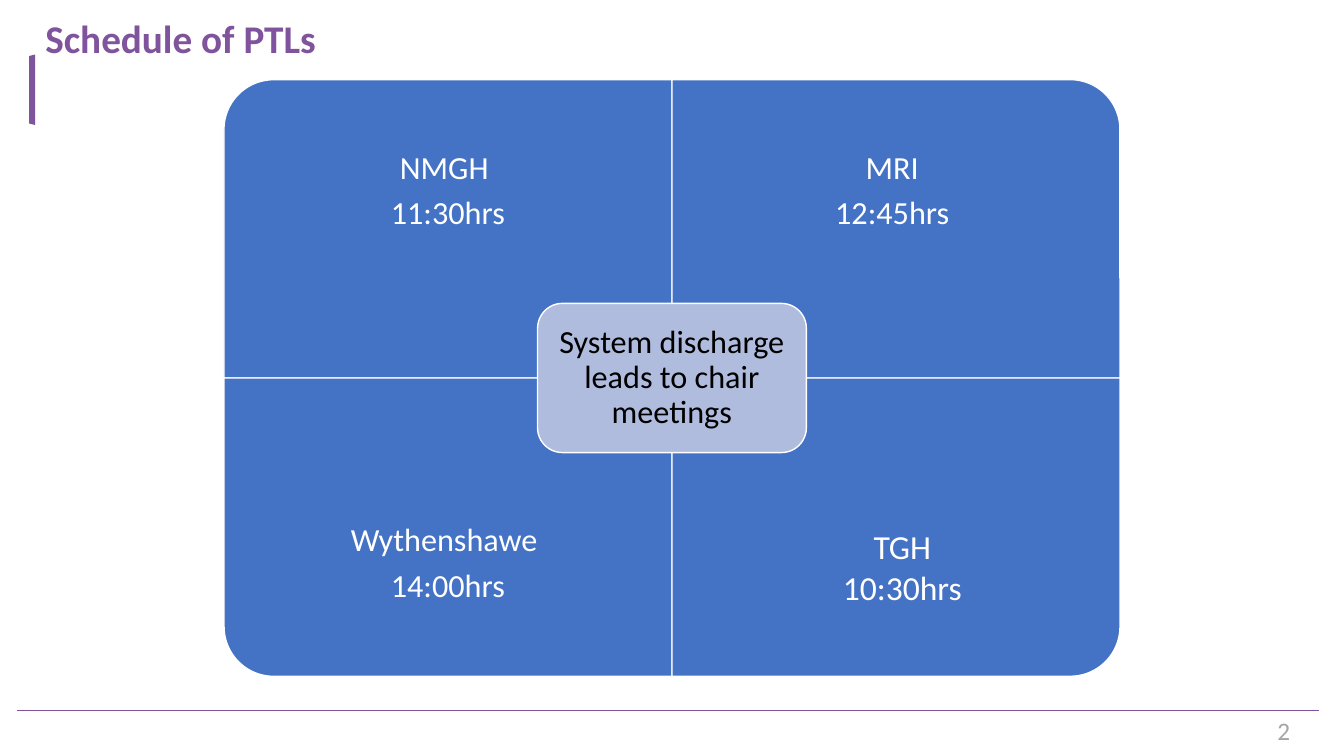
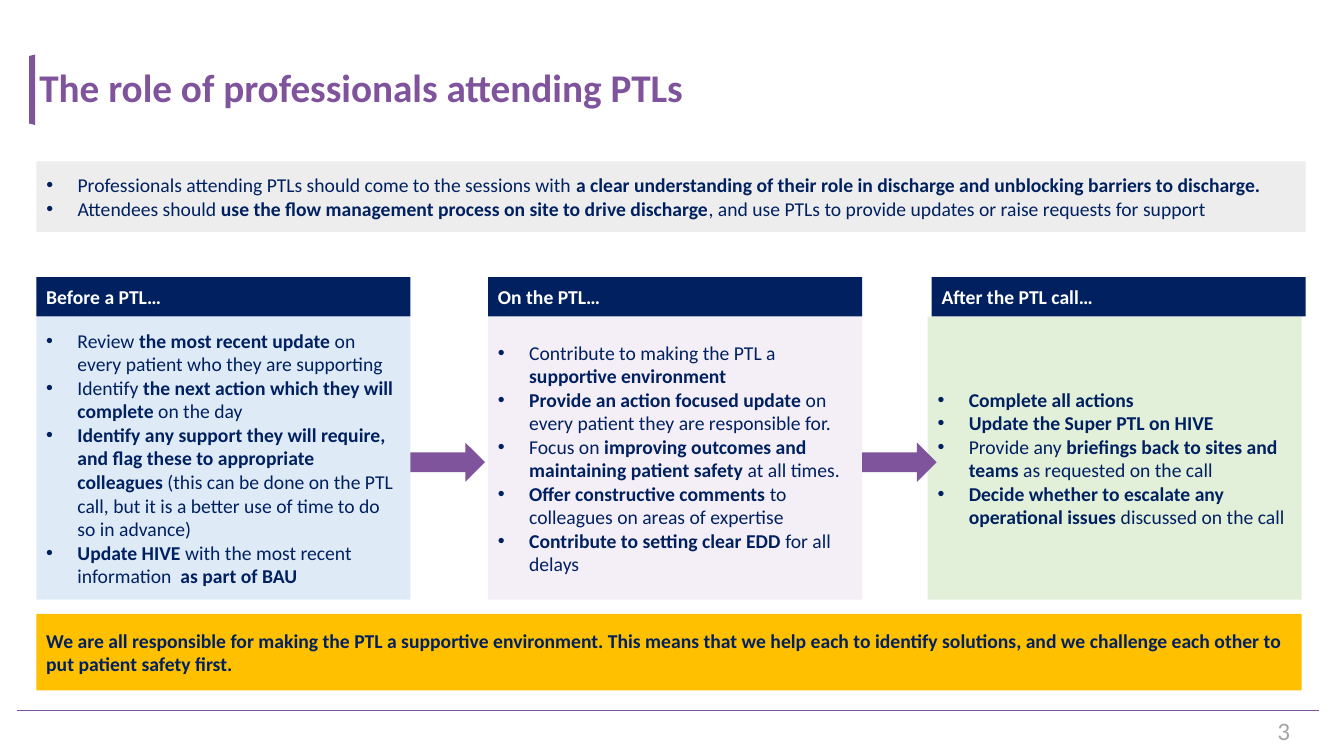
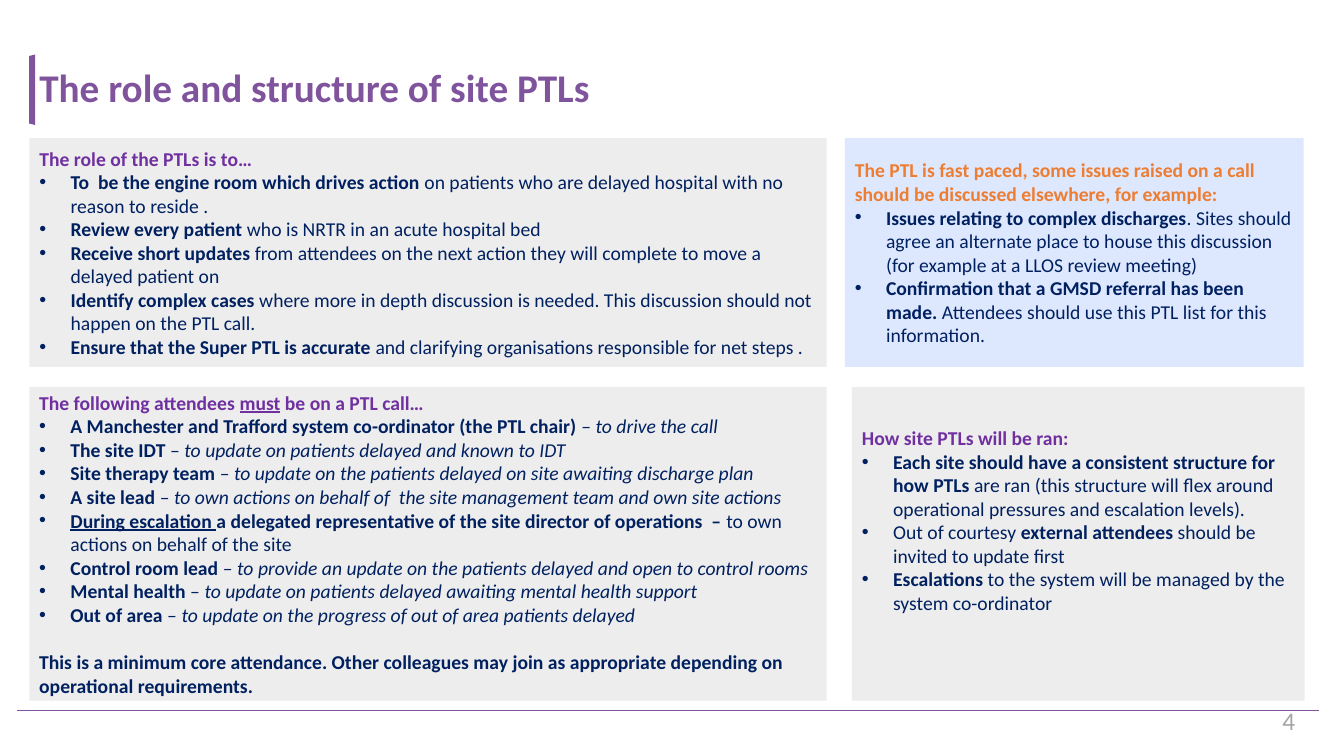
from dataclasses import dataclass
from typing import NamedTuple

from lxml import etree
from pptx import Presentation
from pptx.dml.color import RGBColor
from pptx.enum.shapes import MSO_CONNECTOR, MSO_SHAPE
from pptx.enum.text import MSO_ANCHOR, MSO_AUTO_SIZE, PP_ALIGN
from pptx.oxml.ns import qn
from pptx.util import Inches, Pt

RECT, ROUNDED = MSO_SHAPE.RECTANGLE, MSO_SHAPE.ROUNDED_RECTANGLE
ONE_ROUND, ARROW = MSO_SHAPE.ROUND_1_RECTANGLE, MSO_SHAPE.RIGHT_ARROW
TRAPEZOID, STRAIGHT = MSO_SHAPE.TRAPEZOID, MSO_CONNECTOR.STRAIGHT
TOP, MIDDLE = MSO_ANCHOR.TOP, MSO_ANCHOR.MIDDLE
LEFT, CENTER = PP_ALIGN.LEFT, PP_ALIGN.CENTER
NO_FIT = MSO_AUTO_SIZE.NONE

PURPLE = RGBColor(0x80, 0x53, 0x9D)
VIOLET = RGBColor(0x70, 0x30, 0xA0)
ORANGE = RGBColor(0xED, 0x7D, 0x31)
NAVY = RGBColor(0x00, 0x20, 0x60)
BLUE = RGBColor(0x44, 0x72, 0xC4)
LAVENDER = RGBColor(0xB0, 0xBC, 0xDE)
ICE = RGBColor(0xDE, 0xEB, 0xF7)
LILAC = RGBColor(0xF4, 0xEF, 0xF7)
MINT = RGBColor(0xE2, 0xF0, 0xD9)
SKY = RGBColor(0xDD, 0xE8, 0xFF)
PALE_GREY = RGBColor(0xED, 0xED, 0xED)
MID_GREY = RGBColor(0xA5, 0xA5, 0xA5)
AMBER = RGBColor(0xFF, 0xC0, 0x00)
WHITE = RGBColor(0xFF, 0xFF, 0xFF)
BLACK = RGBColor(0x00, 0x00, 0x00)

WIDTH, HEIGHT = 13.33, 7.5
FONT = "Calibri"
BODY_SIZE = 14
INDENT = Inches(0.31)
# Characters that switch a run format on and off
MARKS = {"*": "bold", "~": "italic", "_": "underline"}


class Box(NamedTuple):
    left: float
    top: float
    width: float
    height: float

    def emu(self) -> list[int]:
        return [Inches(v) for v in self]


@dataclass
class Panel:
    box: Box
    fill: RGBColor
    items: tuple[str, ...] = ()
    heading: str = ""
    heading_colour: RGBColor = VIOLET
    closing: str = ""
    bottom: float = 0.05


class Column(NamedTuple):
    head_left: float
    body_left: float
    heading: str
    fill: RGBColor
    items: tuple[str, ...]


class Site(NamedTuple):
    col: int
    row: int
    rotation: int
    lines: tuple[str, ...]


# Text
def add_runs(p, text: str, size: float, colour: RGBColor) -> None:
    """Write marked-up text, one run per change of format."""
    formats = {"name": FONT, "size": Pt(size), "bold": False, "italic": False, "underline": False}
    chunk = ""
    for char in text + "\0":
        if char not in MARKS and char != "\0":
            chunk += char
            continue
        if chunk:
            r = p.add_run()
            r.text = chunk
            r.font.color.rgb = colour
            for name, value in formats.items():
                setattr(r.font, name, value)
            chunk = ""
        if char in MARKS:
            formats[MARKS[char]] = not formats[MARKS[char]]


def set_bullet(p, bullet: bool) -> None:
    pPr = p._p.get_or_add_pPr()
    pPr.set("marL", str(INDENT if bullet else 0))
    pPr.set("indent", str(-INDENT if bullet else 0))
    if bullet:
        etree.SubElement(pPr, qn("a:buFont")).set("typeface", "Arial")
        etree.SubElement(pPr, qn("a:buChar")).set("char", "•")
    else:
        etree.SubElement(pPr, qn("a:buNone"))


def next_paragraph(tf):
    return tf.add_paragraph() if tf.paragraphs[0].runs else tf.paragraphs[0]


def add_text(s, box: Box, lines: tuple[str, ...], size: float, colour: RGBColor, align=CENTER,
             anchor=MIDDLE, spacing: float = 1, after: float = 0):
    tf = s.shapes.add_textbox(*box.emu()).text_frame
    tf.word_wrap, tf.vertical_anchor = True, anchor
    for line in lines:
        p = next_paragraph(tf)
        p.alignment, p.line_spacing, p.space_after = align, spacing, Pt(after)
        add_runs(p, line, size, colour)


# Shapes
def add_block(s, kind, box: Box, fill: RGBColor, rotation: int = 0, outline: bool = False):
    shape = s.shapes.add_shape(kind, *box.emu())
    shape.shadow.inherit = False
    shape.rotation = rotation
    shape.fill.solid()
    shape.fill.fore_color.rgb = fill
    if outline:
        shape.line.color.rgb, shape.line.width = WHITE, Pt(1)
    else:
        shape.line.fill.background()
    return shape


def fill_panel(shape, panel: Panel) -> None:
    tf = shape.text_frame
    settings = {"word_wrap": True, "auto_size": NO_FIT, "vertical_anchor": MIDDLE,
                "margin_bottom": Inches(panel.bottom)}
    for name, value in settings.items():
        setattr(tf, name, value)
    parts = [(panel.heading, panel.heading_colour, False, 0)]
    parts += [(item, NAVY, True, 0) for item in panel.items]
    parts += [(panel.closing, NAVY, False, 17)]
    for text, colour, bullet, gap in parts:
        if not text:
            continue
        p = next_paragraph(tf)
        set_bullet(p, bullet)
        p.alignment, p.space_before = LEFT, Pt(gap)
        add_runs(p, text, BODY_SIZE, colour)


def add_panel(s, panel: Panel) -> None:
    fill_panel(add_block(s, RECT, panel.box, panel.fill), panel)


def use_body(s, panel: Panel) -> None:
    """Put a panel in the body placeholder of the layout."""
    body = s.placeholders[1]
    body.left, body.top, body.width, body.height = panel.box.emu()
    body.fill.solid()
    body.fill.fore_color.rgb = panel.fill
    fill_panel(body, panel)


# Shared slide parts
def decorate_master(prs, s) -> None:
    """Draw the title mark and the footer rule, then move them to the master."""
    mark = add_block(s, TRAPEZOID, Box(-0.03, 0.86, 0.7, 0.06), PURPLE, rotation=270)
    rule = s.shapes.add_connector(STRAIGHT, *Box(0.17, 7.05, 13.08, 7.05).emu())
    rule.line.color.rgb, rule.line.width = PURPLE, Pt(1)
    etree.SubElement(rule.element.spPr, qn("a:effectLst"))
    for shape in (mark, rule):
        prs.slide_master.element.cSld.spTree.append(shape.element)


def start_slide(prs, layout: int, title: str, number: int, left: float = 0.29, top: float = 0.63,
                number_at: tuple[float, float] = (12.57, 7.05)):
    s = prs.slides.add_slide(prs.slide_layouts[layout])
    shape = s.shapes.title
    shape.left, shape.top, shape.width, shape.height = Box(left, top, 12.82, 0.53).emu()
    tf = shape.text_frame
    tf.vertical_anchor, tf.auto_size = TOP, NO_FIT
    p = tf.paragraphs[0]
    p.alignment, p.line_spacing = LEFT, 0.9
    add_runs(p, f"*{title}*", 28, PURPLE)
    add_text(s, Box(*number_at, 0.51, 0.4), (str(number),), 18, MID_GREY, LEFT, TOP)
    return s


# Slide 1: four sites around a centre
SITES = (
    Site(0, 0, 270, ("NMGH ", "11:30hrs")),
    Site(1, 0, 0, ("MRI ", "12:45hrs ")),
    Site(0, 1, 180, ("Wythenshawe ", "14:00hrs")),
    Site(1, 1, 90, ()),
)


def build_schedule(prs) -> None:
    s = start_slide(prs, 5, "Schedule of PTLs", 2, 0.35, 0.14)
    decorate_master(prs, s)
    cell_w, cell_h, top = WIDTH / 3, 2.96, 0.79
    text_h = cell_h * 0.75
    for site in SITES:
        x, y = WIDTH / 6 + site.col * cell_w, top + site.row * cell_h
        # A quarter turn swaps the sides around the same centre
        w, h = (cell_h, cell_w) if site.rotation % 180 else (cell_w, cell_h)
        box = Box(x + (cell_w - w) / 2, y + (cell_h - h) / 2, w, h)
        add_block(s, ONE_ROUND, box, BLUE, site.rotation, outline=True)
        if site.lines:
            text_top = y + site.row * (cell_h - text_h)
            add_text(s, Box(x, text_top, cell_w, text_h), site.lines, 23, WHITE,
                     spacing=0.9, after=8)
    hub_w, hub_h = cell_w * 0.6, cell_h / 2
    hub = Box((WIDTH - hub_w) / 2, top + cell_h - hub_h / 2, hub_w, hub_h)
    add_block(s, ROUNDED, hub, LAVENDER, outline=True)
    add_text(s, hub, ("System discharge leads to chair meetings",), 23, BLACK, spacing=0.9)
    add_text(s, Box(7.17, 5.17, 3.56, 0.91), ("TGH", "10:30hrs"), 24, WHITE, anchor=TOP)


# Slide 2: before, on and after the call
COLUMNS = (
    Column(0.36, 0.36, "Before a PTL…", ICE, (
        "Review *the most recent update *on every patient who they are supporting",
        "Identify *the next action which they will complete *on the day",
        "*Identify any support they will require, and flag these to appropriate colleagues *"
        "(this can be done on the PTL call, but it is a better use of time to do so in advance)",
        "*Update HIVE *with the most recent information * as part of BAU*",
    )),
    Column(4.84, 4.84, "On the PTL…", LILAC, (
        "Contribute to making the PTL a *supportive environment*",
        "*Provide an action focused update *on every patient they are responsible for.",
        "Focus on *improving outcomes and maintaining patient safety* at all times.",
        "*Offer constructive comments *to colleagues on areas of expertise",
        "*Contribute to setting clear EDD *for all delays",
    )),
    Column(9.24, 9.2, "After the PTL call…", MINT, (
        "*Complete all actions*",
        "*Update the Super PTL on HIVE*",
        "Provide any *briefings back to sites and teams* as requested on the call",
        "*Decide whether to escalate any operational issues *discussed on the call",
    )),
)
INTRO = Panel(Box(0.36, 1.6, 12.59, 0.7), PALE_GREY, (
    "Professionals attending PTLs should come to the sessions with *a clear understanding of "
    "their role in discharge and unblocking barriers to discharge.*",
    "Attendees should *use the flow management process on site to drive discharge*, and use "
    "PTLs to provide updates or raise requests for support",
))
MESSAGE = Panel(
    Box(0.36, 6.09, 12.55, 0.76), AMBER, heading_colour=NAVY,
    heading="*We are all responsible for making the PTL a supportive environment. This means that "
            "we help each to identify solutions, and we challenge each other to put patient "
            "safety first.*",
)


def build_professionals(prs) -> None:
    s = start_slide(prs, 1, "The role of professionals attending PTLs", 3)
    use_body(s, INTRO)
    col_w, head_top, head_h, body_h = 3.71, 2.75, 0.39, 2.81
    for col in COLUMNS:
        add_panel(s, Panel(Box(col.body_left, head_top + head_h, col_w, body_h), col.fill, col.items))
        add_panel(s, Panel(Box(col.head_left, head_top, col_w, head_h), NAVY,
                           heading=f"*{col.heading}*", heading_colour=WHITE))
    for col in COLUMNS[:-1]:
        add_block(s, ARROW, Box(col.body_left + col_w, 4.39, 0.74, 0.39), PURPLE)
    add_panel(s, MESSAGE)


# Slide 3: role, attendance and running of the calls
ROLE = Panel(Box(0.29, 1.37, 7.91, 2.27), PALE_GREY, (
    "*To  be the engine room which drives action *on patients who are delayed hospital with no "
    "reason to reside .",
    "*Review every patient *who is NRTR in an acute hospital bed",
    "*Receive short updates* from attendees on the next action they will complete to move a "
    "delayed patient on",
    "*Identify complex cases* where more in depth discussion is needed. This discussion should "
    "not happen on the PTL call.",
    "*Ensure that the Super PTL is accurate *and clarifying organisations responsible for net "
    "steps .",
), heading="*The role of the PTLs is to…*")
SIDE_PANELS = (
    Panel(Box(0.29, 3.84, 7.91, 3.11), PALE_GREY, (
        "*A Manchester and Trafford system co-ordinator (the PTL chair)* – ~to drive the call~",
        "*The site IDT* – ~to update on patients delayed and known to IDT~",
        "*Site therapy team* – ~to update on the patients delayed on site awaiting discharge plan~",
        "*A site lead* – ~to own actions on behalf of  the site management team and own site "
        "actions~",
        "*_During escalation _a delegated representative of the site director of operations  – *"
        "to own actions on behalf of the site",
        "*Control room lead *– ~to provide an update on the patients delayed and open to control "
        "rooms~",
        "*Mental health* – ~to update on patients delayed awaiting mental health support~",
        "*Out of area* – ~to update on the progress of out of area patients delayed~",
    ), heading="*The following attendees _must_ be on a PTL call…*",
        closing="*This is a minimum core attendance. Other colleagues may join as appropriate "
                "depending on operational requirements.*"),
    Panel(Box(8.45, 3.84, 4.49, 3.11), PALE_GREY, (
        "*Each site should have a consistent structure for how PTLs *are ran (this structure will "
        "flex around operational pressures and escalation levels).",
        "Out of courtesy *external attendees* should be invited to update first",
        "*Escalations* to the system will be managed by the system co-ordinator",
    ), heading="*How site PTLs will be ran:*", bottom=0.52),
    Panel(Box(8.38, 1.37, 4.55, 2.27), SKY, (
        "*Issues relating to complex discharges*. Sites should agree an alternate place to house "
        "this discussion (for example at a LLOS review meeting)",
        "*Confirmation that a GMSD referral has been made. *Attendees should use this PTL list "
        "for this information.",
    ), heading="*The PTL is fast paced, some issues raised on a call should be discussed "
               "elsewhere, for example:*", heading_colour=ORANGE),
)


def build_structure(prs) -> None:
    s = start_slide(prs, 1, "The role and structure of site PTLs", 4, number_at=(12.62, 6.95))
    use_body(s, ROLE)
    for panel in SIDE_PANELS:
        add_panel(s, panel)


def main() -> None:
    prs = Presentation()
    prs.slide_width, prs.slide_height = Inches(WIDTH), Inches(HEIGHT)
    build_schedule(prs)
    build_professionals(prs)
    build_structure(prs)
    prs.save("out.pptx")


if __name__ == "__main__":
    main()
